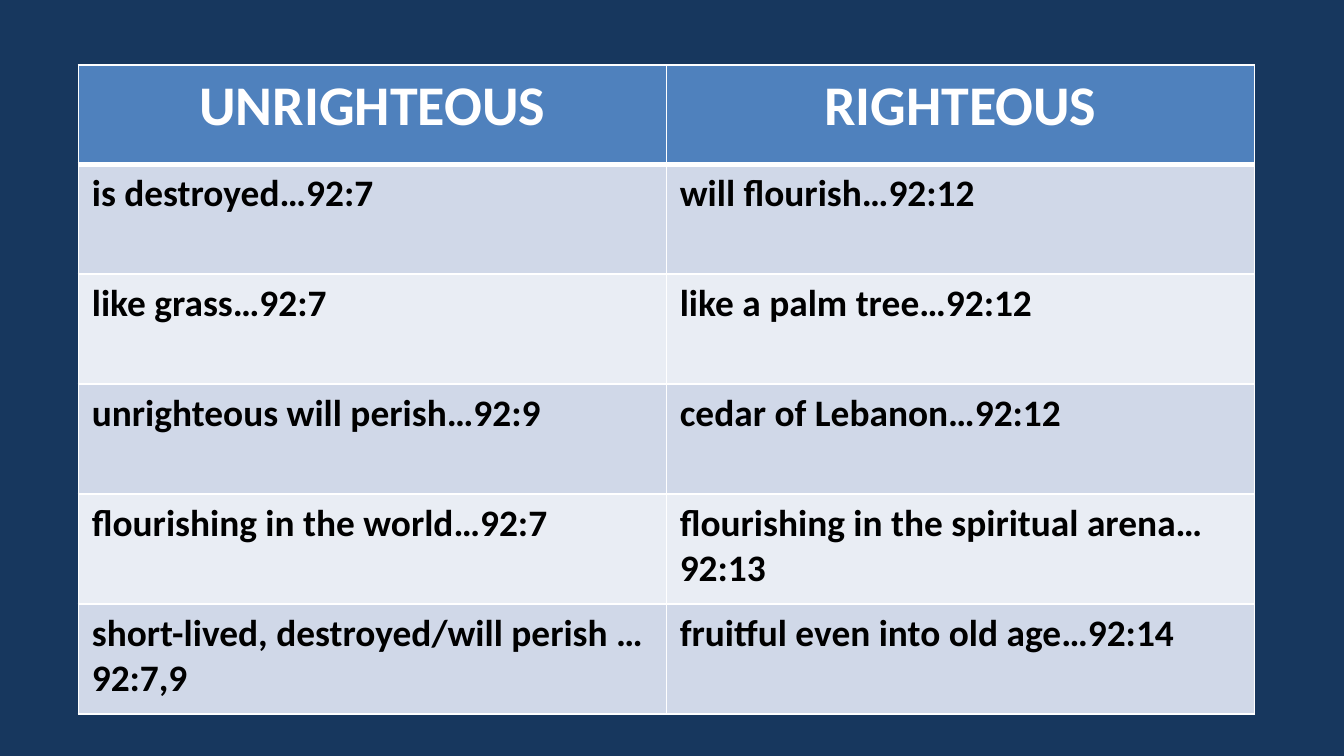
import pptx
import pptx.dml.color
import pptx.enum.text
import pptx.oxml
import pptx.oxml.ns
import pptx.util
from pptx.dml.color import RGBColor
from pptx.util import Pt

NAVY = RGBColor(0x17, 0x37, 0x5E)
HEADER_BLUE = RGBColor(0x4F, 0x81, 0xBD)
BAND_DARK = RGBColor(0xD0, 0xD8, 0xE8)
BAND_LIGHT = RGBColor(0xE9, 0xED, 0xF4)
WHITE = RGBColor(0xFF, 0xFF, 0xFF)
BLACK = RGBColor(0x00, 0x00, 0x00)

FONT = "Calibri"
HEADER_HEIGHT = 53.2
THIN, THICK = 1, 3

HEADINGS = ("UNRIGHTEOUS", "RIGHTEOUS")
CONTRASTS = (
    ("is destroyed…92:7", "will flourish…92:12"),
    ("like grass…92:7", "like a palm tree…92:12"),
    ("unrighteous will perish…92:9", "cedar of Lebanon…92:12"),
    ("flourishing in the world…92:7", "flourishing in the spiritual arena…92:13"),
    ("short-lived, destroyed/will perish …92:7,9", "fruitful even into old age…92:14"),
)


def set_borders(cell, top, bottom):
    """Draw white cell borders; top and bottom are widths in points."""
    properties = cell._tc.get_or_add_tcPr()
    for side, width in (("L", THIN), ("R", THIN), ("T", top), ("B", bottom)):
        properties.append(pptx.oxml.parse_xml(
            f'<a:ln{side} {pptx.oxml.ns.nsdecls("a")} w="{Pt(width)}">'
            f'<a:solidFill><a:srgbClr val="{WHITE}"/></a:solidFill></a:ln{side}>'))


def fill_cell(cell, text, size, color, background, alignment):
    cell.fill.solid()
    cell.fill.fore_color.rgb = background
    paragraph = cell.text_frame.paragraphs[0]
    paragraph.alignment = alignment
    run = paragraph.add_run()
    run.text = text
    run.font.name = FONT
    run.font.size = Pt(size)
    run.font.bold = True
    run.font.color.rgb = color


def add_contrast_table(slide, left, top, width, height):
    rows = (HEADINGS,) + CONTRASTS
    table = slide.shapes.add_table(
        len(rows), len(HEADINGS), Pt(left), Pt(top), Pt(width), Pt(height)).table
    for column in table.columns:
        column.width = Pt(width / len(HEADINGS))
    body_height = (height - HEADER_HEIGHT) / len(CONTRASTS)
    alignments = pptx.enum.text.PP_ALIGN
    for index, texts in enumerate(rows):
        is_header = index == 0
        table.rows[index].height = Pt(HEADER_HEIGHT if is_header else body_height)
        band = BAND_DARK if index % 2 else BAND_LIGHT
        for cell, text in zip(table.rows[index].cells, texts):
            set_borders(cell, THICK if index == 1 else THIN, THICK if is_header else THIN)
            if is_header:
                fill_cell(cell, text, 30, WHITE, HEADER_BLUE, alignments.CENTER)
            else:
                fill_cell(cell, text, 20, BLACK, band, alignments.LEFT)


def main():
    presentation = pptx.Presentation()
    presentation.slide_width = Pt(720)
    presentation.slide_height = Pt(405)
    slide = presentation.slides.add_slide(presentation.slide_layouts[6])
    slide.background.fill.solid()
    slide.background.fill.fore_color.rgb = NAVY
    add_contrast_table(slide, 42, 34.8, 630, 347.7)
    presentation.save("out.pptx")


if __name__ == "__main__":
    main()
